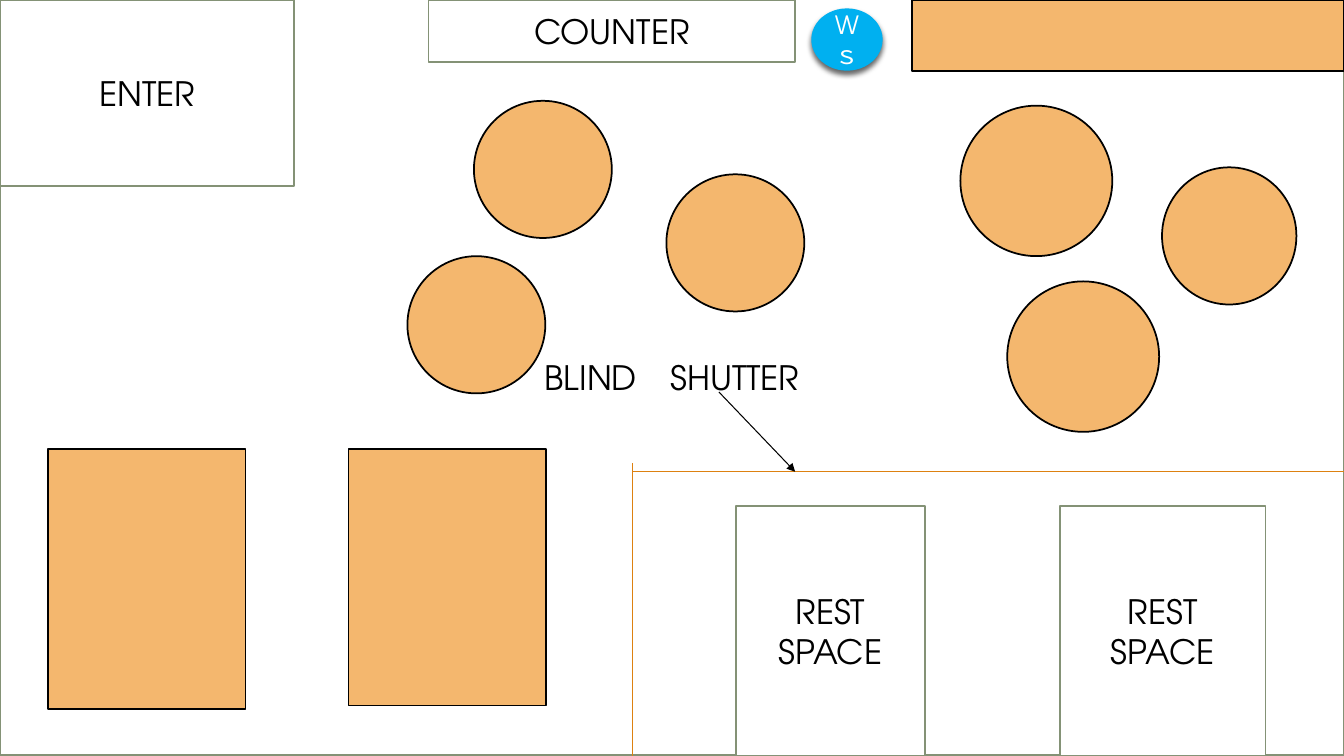
from lxml import etree
from pptx import Presentation
from pptx.dml.color import RGBColor
from pptx.enum.shapes import MSO_CONNECTOR, MSO_SHAPE
from pptx.enum.text import MSO_ANCHOR, PP_ALIGN
from pptx.oxml import parse_xml
from pptx.oxml.ns import nsdecls, qn
from pptx.util import Pt

RECT = MSO_SHAPE.RECTANGLE
ROUND = MSO_SHAPE.FLOWCHART_CONNECTOR
STRAIGHT = MSO_CONNECTOR.STRAIGHT
MIDDLE = MSO_ANCHOR.MIDDLE
CENTER = PP_ALIGN.CENTER

COLORS = {
    "white": "FFFFFF",
    "black": "000000",
    "wall": "849276",
    "table": "F4B76E",
    "partition": "DD8111",
    "basin": "00B0F0",
}


def rgb(name):
    return RGBColor.from_string(COLORS[name])


class FloorPlan:
    font = "TeX Gyre Adventor"
    outline = 1.25
    thin = 0.75

    def __init__(self, slide):
        self.slide = slide

    def shape(self, kind, box, fill, line=None):
        sp = self.slide.shapes.add_shape(kind, *map(Pt, box))
        sp.shadow.inherit = False
        sp.fill.solid()
        sp.fill.fore_color.rgb = rgb(fill)
        if line:
            sp.line.color.rgb = rgb(line)
            sp.line.width = Pt(self.outline)
        else:
            sp.line.fill.background()
        return sp

    def label(self, sp, lines, size=24, color="black"):
        tf = sp.text_frame
        tf.word_wrap = True
        tf.vertical_anchor = MIDDLE
        for i, text in enumerate(lines):
            p = tf.add_paragraph() if i else tf.paragraphs[0]
            p.alignment = CENTER
            r = p.add_run()
            r.text = text
            r.font.name = self.font
            r.font.size = Pt(size)
            r.font.color.rgb = rgb(color)
            ea = etree.SubElement(r.font._element, qn("a:ea"))
            ea.set("typeface", self.font)

    def room(self, box, *lines):
        self.label(self.shape(RECT, box, "white", "wall"), lines)

    def table(self, kind, box):
        self.shape(kind, box, "table", "black")

    def basin(self, box, text):
        sp = self.shape(ROUND, box, "basin")
        self.label(sp, [text], 18, "white")
        effects = sp._element.spPr.find(qn("a:effectLst"))
        effects.append(parse_xml(
            f'<a:outerShdw {nsdecls("a")} blurRad="{Pt(4)}" dist="{Pt(3)}" '
            f'dir="5400000" rotWithShape="0"><a:srgbClr val="{COLORS["black"]}">'
            '<a:alpha val="60000"/></a:srgbClr></a:outerShdw>'))

    def line(self, ends, color, arrow=False):
        c = self.slide.shapes.add_connector(STRAIGHT, *map(Pt, ends))
        c.line.color.rgb = rgb(color)
        c.line.width = Pt(self.thin)
        if arrow:
            tail = etree.SubElement(c.line._get_or_add_ln(), qn("a:tailEnd"))
            tail.set("type", "triangle")
        etree.SubElement(c._element.spPr, qn("a:effectLst"))


def main():
    prs = Presentation()
    prs.slide_width, prs.slide_height = Pt(960), Pt(540)
    s = prs.slides.add_slide(prs.slide_layouts[6])
    plan = FloorPlan(s)

    plan.room((0, -0.7, 960, 540), "BLIND\u3000SHUTTER".replace("\u3000", "　"))
    plan.room((0, 0, 210, 133), "ENTER")
    for left, width in ((525.5, 135.5), (757, 147)):
        plan.room((left, 361.5, width, 178.5), "REST", "SPACE")
    plan.room((306, 0, 262, 44.5), "COUNTER")
    plan.basin((579.5, 6, 51, 44.5), "Wｓ")

    for left, top, width, height in (
        (476, 124.5, 98.5, 98),
        (719.5, 201, 108.5, 107.5),
        (686, 75.5, 108.5, 107.5),
        (291, 183, 98.5, 98),
        (338.5, 72, 98.5, 98),
        (830, 119.5, 96, 98),
    ):
        plan.table(ROUND, (left, top, width, height))
    for box in ((651.5, 0, 308.5, 50.5),
                (34.5, 320.5, 141, 186),
                (249, 320.5, 141, 183.5)):
        plan.table(RECT, box)

    plan.line((451.5, 337, 960, 337), "partition")
    plan.line((451.5, 331, 451.5, 540), "partition")
    plan.line((513.5, 280, 568, 337), "black", arrow=True)
    prs.save("out.pptx")


if __name__ == "__main__":
    main()
